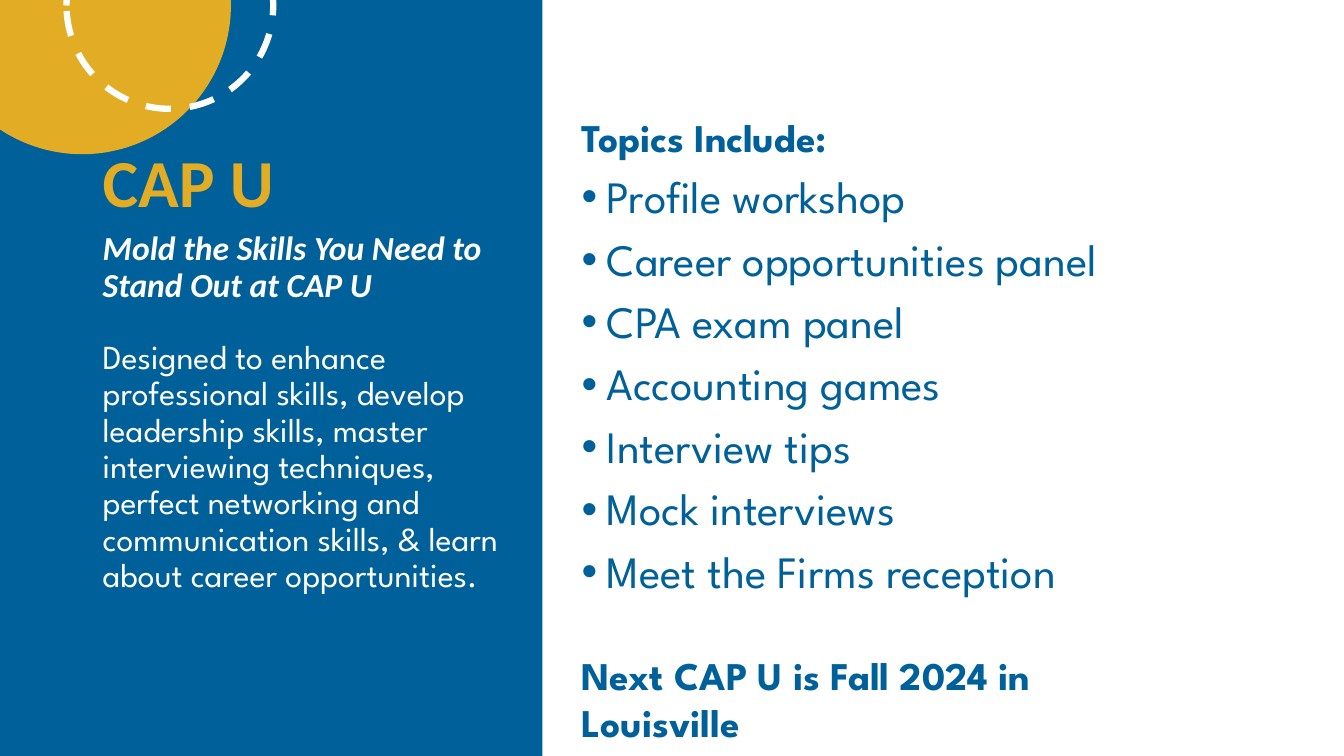
from pptx import Presentation
from pptx import util as u
from pptx.dml.color import RGBColor
from pptx.enum import dml, shapes, text
from pptx.oxml import parse_xml
from pptx.oxml.ns import nsdecls

BLUE, GOLD, WHITE = "00609A", "E2AC24", "FFFFFF"
SPARTAN = "League Spartan"
TOPICS = [
    "Profile workshop",
    "Career opportunities panel",
    "CPA exam panel",
    "Accounting games",
    "Interview tips",
    "Mock interviews",
    "Meet the Firms reception",
]
PITCH = (
    "Designed to enhance professional skills, develop leadership skills, "
    "master interviewing techniques, perfect networking and communication "
    "skills, & learn about career opportunities."
)


def color(code):
    return RGBColor.from_string(code)


def add_text(slide, box, anchor=text.MSO_ANCHOR.TOP):
    frame = slide.shapes.add_textbox(*map(u.Inches, box)).text_frame
    frame.word_wrap = True
    frame.vertical_anchor = anchor
    return frame


def add_line(frame, words, look, space=None):
    """Write one paragraph, using the empty first one if it is free."""
    para = frame.paragraphs[0]
    if para.runs:
        para = frame.add_paragraph()
    for name, value in (space or {}).items():
        setattr(para, name, value)
    run = para.add_run()
    run.text = words
    look = dict(look)
    run.font.color.rgb = color(look.pop("color"))
    run.font.size = u.Pt(look.pop("size"))
    for name, value in look.items():
        setattr(run.font, name, value)
    return para


def add_bullet(para, indent):
    props = para._p.get_or_add_pPr()
    props.set("marL", str(u.Inches(indent)))
    props.set("indent", str(u.Inches(-indent)))
    for tag in ('buFont %s typeface="Arial"', 'buChar %s char="•"'):
        props.append(parse_xml("<a:" + tag % nsdecls("a") + "/>"))


def add_form(slide, kind, box, fill=None, line=None):
    form = slide.shapes.add_shape(kind, *map(u.Inches, box))
    form.shadow.inherit = False
    if fill:
        form.fill.solid()
        form.fill.fore_color.rgb = color(fill)
    else:
        form.fill.background()
    if line:
        form.line.color.rgb = color(line)
        form.line.width = u.Pt(4.5)
        form.line.dash_style = dml.MSO_LINE.DASH
    else:
        form.line.fill.background()


def add_intro(slide, left, top, width, height):
    """Place the title, tagline and pitch of the left column."""
    tight = {"line_spacing": 0.9}
    head = 1.75
    title = add_text(slide, (left, top, width, head), text.MSO_ANCHOR.BOTTOM)
    look = {"name": "Calibri", "size": 48, "color": GOLD, "bold": True}
    add_line(title, "CAP U", look, tight)

    body = add_text(slide, (left, top + head, width, height - head))
    look.update(size=24, color=WHITE, italic=True)
    add_line(body, "Mold the Skills You Need to Stand Out at CAP U", look, tight)
    plain = {"name": SPARTAN, "size": 24, "color": WHITE}
    add_line(body, PITCH, plain, {**tight, "space_before": u.Pt(26)})


def add_topics(slide, left, top, width, height):
    """Place the topic list and the next date under it."""
    strong = {"name": SPARTAN, "size": 28, "color": BLUE, "bold": True}
    plain = {**strong, "size": 32, "bold": False}
    foot = 1.04
    body = add_text(slide, (left, top, width, height - foot))
    add_line(body, "Topics Include:", strong)
    for topic in TOPICS:
        space = {"line_spacing": 0.9, "space_before": u.Pt(10)}
        add_bullet(add_line(body, topic, plain, space), 0.25)

    note = add_text(slide, (left, top + height - foot, width - 1.2, foot))
    add_line(note, "Next CAP U is Fall 2024 in Louisville", strong)


def add_rings(slide, left, top):
    """Place the gold disc and the dashed ring over it."""
    oval = shapes.MSO_SHAPE.OVAL
    add_form(slide, oval, (left, top, 2.95, 2.95), fill=GOLD)
    add_form(slide, oval, (left + 1.32, top + 0.45, 2.05, 2.05), line=WHITE)


def main():
    deck = Presentation()
    deck.slide_width, deck.slide_height = u.Inches(13.33), u.Inches(7.5)
    slide = deck.slides.add_slide(deck.slide_layouts[6])
    slide.background.fill.solid()
    slide.background.fill.fore_color.rgb = color(BLUE)

    split = 5.38
    panel = (split, 0, 13.33 - split, 7.5)
    add_form(slide, shapes.MSO_SHAPE.RECTANGLE, panel, fill=WHITE)
    add_intro(slide, 0.92, 0.5, 4.3, 6.48)
    add_topics(slide, 5.67, 1.08, 6.75, 6.37)
    add_rings(slide, -0.66, -1.42)
    deck.save("out.pptx")


if __name__ == "__main__":
    main()
